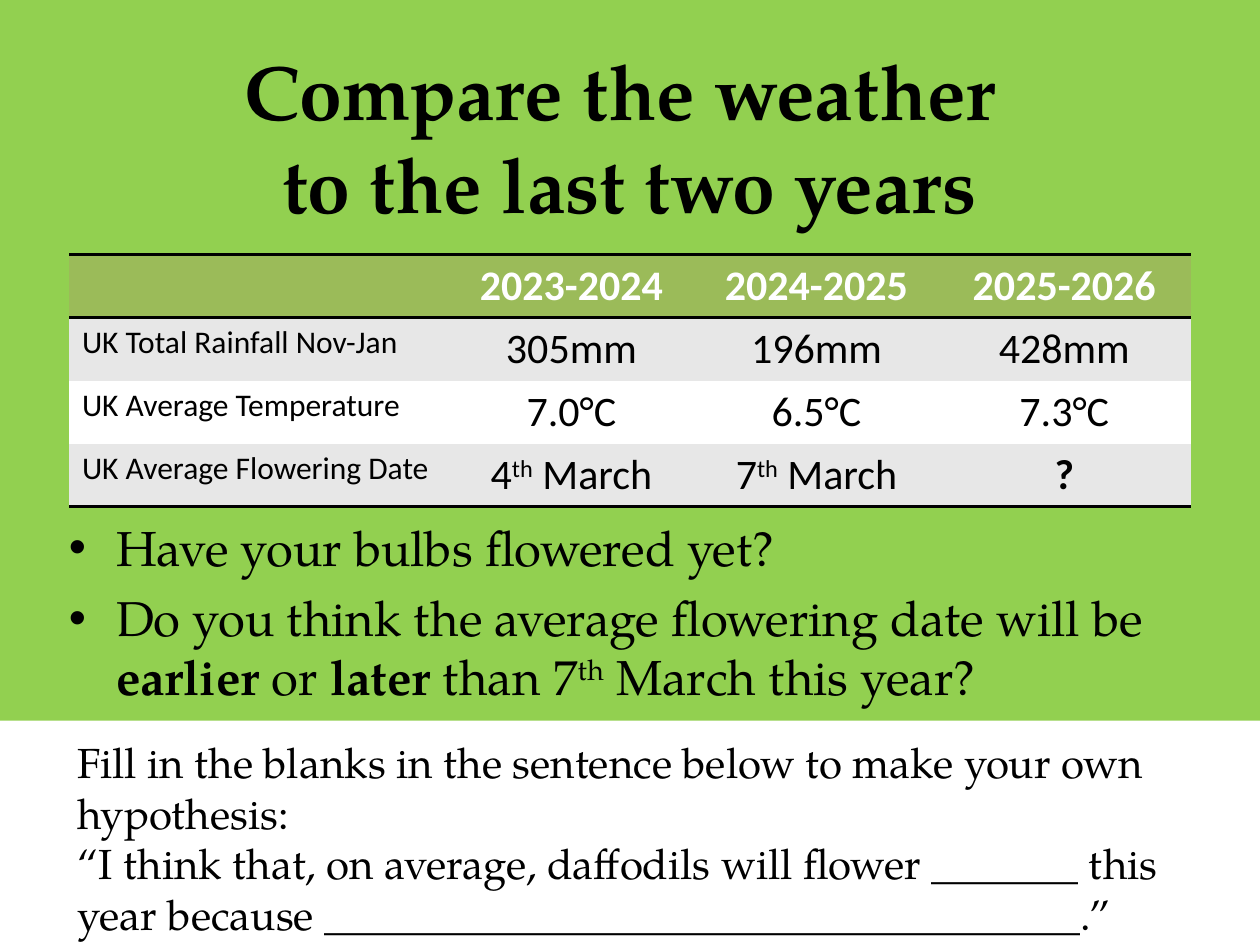
"""Build the slide comparing this year's daffodil weather with the last two years."""
from lxml import etree
from pptx import Presentation
from pptx.dml.color import RGBColor
from pptx.enum.shapes import MSO_SHAPE
from pptx.enum.text import PP_ALIGN
from pptx.oxml.ns import qn
from pptx.util import Cm, Pt

RECTANGLE = MSO_SHAPE.RECTANGLE
LEFT, CENTER = PP_ALIGN.LEFT, PP_ALIGN.CENTER
GREEN = RGBColor(0x92, 0xD0, 0x50)
OLIVE = RGBColor(0x9B, 0xBB, 0x59)
GREY = RGBColor(0xE7, 0xE7, 0xE7)
WHITE = RGBColor(0xFF, 0xFF, 0xFF)
BLACK = RGBColor(0x00, 0x00, 0x00)
SERIF, SANS = "TeX Gyre Pagella", "Calibri"
PLAIN_TABLE = "{2D5ABB26-0587-4C30-8999-92F81FD0307C}"
BOLD = {"bold": True}
SUPERSCRIPT = {"baseline": 30000}

HEADINGS = ["", "2023-2024", "2024-2025", "2025-2026"]
MEASURES = [
    ["UK Total Rainfall Nov-Jan", "305mm", "196mm", "428mm"],
    ["UK Average Temperature", "7.0°C", "6.5°C", "7.3°C"],
    ["UK Average Flowering Date",
     [("4", {}), ("th", SUPERSCRIPT), (" March", {})],
     [("7", {}), ("th", SUPERSCRIPT), (" March", {})],
     [("?", BOLD)]],
]
QUESTIONS = [
    "Have your bulbs flowered yet?",
    [("Do you think the average flowering date will be ", {}),
     ("earlier", BOLD), (" or ", {}), ("later", BOLD), (" than 7", {}),
     ("th", SUPERSCRIPT), (" March this year?", {})],
]
HYPOTHESIS = [
    "Fill in the blanks in the sentence below to make your own hypothesis:",
    "“I think that, on average, daffodils will flower _______ this year because "
    + "_" * 36 + ".”",
]


class WeatherSlide:
    """Hold the slide and its text style, and add each kind of element."""

    def __init__(self, slide, background):
        self.slide = slide
        self.style = {"name": SERIF, "bold": False}
        fill = slide.background.fill
        fill.solid()
        fill.fore_color.rgb = background

    def add_runs(self, paragraph, content, size, color=BLACK, **style):
        pieces = [(content, {})] if isinstance(content, str) else content
        for text, changes in pieces:
            for index, line in enumerate(text.split("\n")):
                if index:
                    paragraph.add_line_break()
                run = paragraph.add_run()
                run.text = line
                values = {**self.style, "size": Pt(size), **style, **changes}
                baseline = values.pop("baseline", None)
                for name, value in values.items():
                    setattr(run.font, name, value)
                run.font.color.rgb = color
                if baseline:
                    run._r.get_or_add_rPr().set("baseline", str(baseline))

    def panel(self, box, color):
        panel = self.slide.shapes.add_shape(RECTANGLE, *map(Cm, box))
        panel.shadow.inherit = False
        panel.fill.solid()
        panel.fill.fore_color.rgb = color
        panel.line.fill.background()

    def text(self, box, contents, size, align=LEFT, bulleted=False, **style):
        frame = self.slide.shapes.add_textbox(*map(Cm, box)).text_frame
        frame.word_wrap = True
        for index, content in enumerate(contents):
            paragraph = frame.add_paragraph() if index else frame.paragraphs[0]
            paragraph.alignment = align
            if bulleted:
                self.bullet(paragraph)
                paragraph.space_before = Pt(6.5 if index else 0)
            self.add_runs(paragraph, content, size, **style)

    def bullet(self, paragraph):
        properties = paragraph._p.get_or_add_pPr()
        properties.set("marL", str(Cm(0.95)))
        properties.set("indent", str(-Cm(0.95)))
        etree.SubElement(properties, qn("a:buFont"), typeface="Arial")
        etree.SubElement(properties, qn("a:buChar"), char="•")

    def border(self, cell, side):
        properties = cell._tc.get_or_add_tcPr()
        line = etree.SubElement(properties, qn(f"a:ln{side}"), w=str(Pt(2)))
        fill = etree.SubElement(line, qn("a:solidFill"))
        etree.SubElement(fill, qn("a:srgbClr"), val=str(BLACK))

    def table(self, left, top, widths, row_height, rows):
        table = self.slide.shapes.add_table(
            len(rows), len(widths), Cm(left), Cm(top),
            Cm(sum(widths)), Cm(row_height * len(rows))).table
        table.horz_banding = False
        table._tbl.tblPr.find(qn("a:tableStyleId")).text = PLAIN_TABLE
        for column, width in zip(table.columns, widths):
            column.width = Cm(width)
        sides = {0: "TB", len(rows) - 1: "B"}
        for r, row in enumerate(rows):
            table.rows[r].height = Cm(row_height)
            heading = r == 0
            for c, content in enumerate(row):
                cell = table.cell(r, c)
                for side in sides.get(r, ""):
                    self.border(cell, side)
                cell.fill.solid()
                cell.fill.fore_color.rgb = OLIVE if heading else (WHITE, GREY)[r % 2]
                paragraph = cell.text_frame.paragraphs[0]
                paragraph.alignment = CENTER if c else LEFT
                if content:
                    self.add_runs(paragraph, content, 24 if c else 18,
                                  WHITE if heading else BLACK, name=SANS, bold=heading)


def main():
    deck = Presentation()
    deck.slide_width, deck.slide_height = Cm(25.4), Cm(19.05)
    page = WeatherSlide(deck.slides.add_slide(deck.slide_layouts[6]), GREEN)
    page.panel((0, 14.53, 25.4, 4.6), WHITE)
    page.text((1.27, 0.76, 22.86, 3.18),
              ["Compare the weather \nto the last two years"], 44, CENTER, bold=True)
    page.text((1.14, 10.31, 22.86, 4.8), QUESTIONS, 28, bulleted=True)
    page.text((1.32, 14.73, 22.58, 4.37), HYPOTHESIS, 24)
    page.table(1.4, 5.13, [7.62, 5, 4.88, 5.11], 1.27, [HEADINGS, *MEASURES])
    deck.save("out.pptx")


if __name__ == "__main__":
    main()
